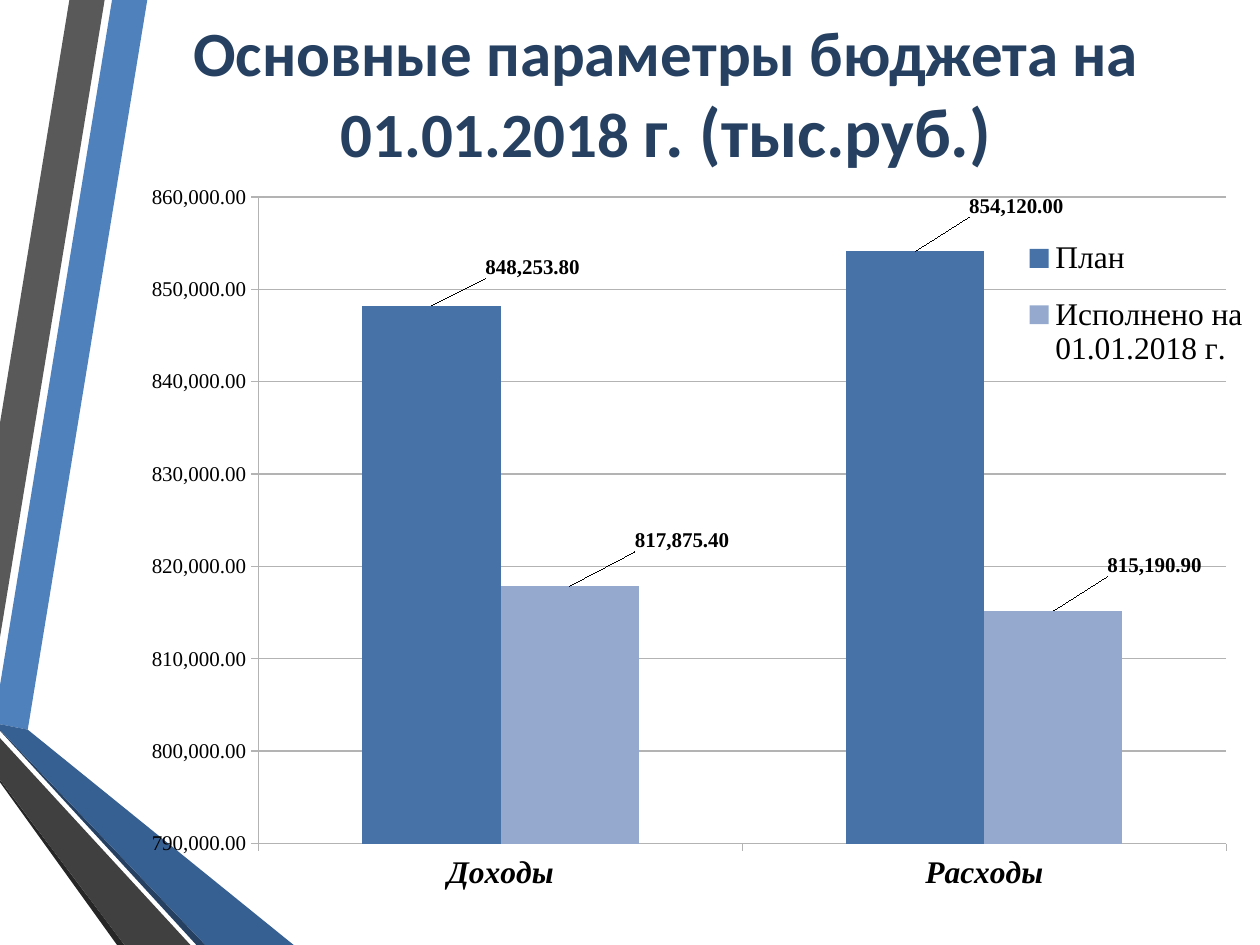
from dataclasses import dataclass

from lxml import etree
from pptx import Presentation
from pptx.chart.data import CategoryChartData
from pptx.dml.color import RGBColor
from pptx.enum.chart import XL_CHART_TYPE as ChartType
from pptx.enum.chart import XL_LABEL_POSITION as LabelPosition
from pptx.enum.chart import XL_LEGEND_POSITION as LegendPosition
from pptx.enum.chart import XL_TICK_MARK as TickMark
from pptx.enum.text import MSO_ANCHOR as Anchor
from pptx.enum.text import PP_ALIGN as Align
from pptx.oxml.ns import qn
from pptx.util import Cm, Pt

COLORS = {
    "blue": "4F81BD", "gray": "595959", "black": "262626",
    "navy": "254061", "steel": "376092", "charcoal": "404040",
    "plan": "4672A8", "actual": "95A9CF", "grid": "B3B3B3", "text": "000000",
}
SERIF = "Times New Roman"
NUMBER_FORMAT = "#,##0.00"
LABEL_FONT = {"name": SERIF, "size": Pt(12), "bold": True}


@dataclass
class Ribbon:
    color: str
    points: list[tuple[float, float]]  # centimetres


@dataclass
class BudgetSeries:
    name: str
    color: str
    values: list[float]
    label_offsets: list[tuple[float, float]]  # fractions of the chart


RIBBONS = [
    Ribbon("blue", [(0, 13.82), (0, 14.6), (0.56, 14.71), (2.97, 0), (2.26, 0)]),
    Ribbon("gray", [(2.11, 0), (1.4, 0), (0, 8.53), (0, 12.85)]),
    Ribbon("black", [(0, 15.72), (0, 15.77), (2.36, 19.05), (2.51, 19.05)]),
    Ribbon("navy", [(0, 14.71), (0, 14.73), (3.96, 19.05), (4.14, 19.05)]),
    Ribbon("steel", [(0, 14.71), (4.14, 19.05), (5.92, 19.05), (0.56, 14.71), (0, 14.6)]),
    Ribbon("charcoal", [(0, 15.72), (2.51, 19.05), (3.84, 19.05), (0, 14.88)]),
]
CATEGORIES = ["Доходы", "Расходы"]
BUDGET = [
    BudgetSeries("План", "plan", [848253.8, 854120], [(0.09, -0.03), (0.09, -0.04)]),
    BudgetSeries("Исполнено на 01.01.2018 г.", "actual", [817875.4, 815190.9],
                 [(0.1, -0.04), (0.09, -0.04)]),
]


def rgb(name: str) -> RGBColor:
    return RGBColor.from_string(COLORS[name])


def apply_format(target, values: dict) -> None:
    for attribute, value in values.items():
        setattr(target, attribute, value)


def manual_layout(values: dict):
    """Return a c:layout element holding the given settings."""
    layout = etree.Element(qn("c:layout"))
    manual = etree.SubElement(layout, qn("c:manualLayout"))
    for tag, value in values.items():
        etree.SubElement(manual, qn(f"c:{tag}")).set("val", str(value))
    return layout


def edge_layout(x: float, y: float, w: float, h: float, **target):
    return manual_layout({**target, "xMode": "edge", "yMode": "edge",
                          "x": x, "y": y, "w": w, "h": h})


def draw_ribbon(slide, ribbon: Ribbon) -> None:
    points = [(Cm(x), Cm(y)) for x, y in ribbon.points]
    builder = slide.shapes.build_freeform(*points[0])
    builder.add_line_segments(points[1:], close=True)
    shape = builder.convert_to_shape()
    shape.shadow.inherit = False
    shape.fill.solid()
    shape.fill.fore_color.rgb = rgb(ribbon.color)
    shape.line.fill.background()


def draw_title(slide) -> None:
    box = slide.shapes.add_textbox(Cm(2.72), Cm(0), Cm(21.41), Cm(3.73))
    apply_format(box.text_frame, {"word_wrap": True, "vertical_anchor": Anchor.MIDDLE})
    paragraph = box.text_frame.paragraphs[0]
    paragraph.alignment = Align.CENTER

    def add_run(text: str, size: float) -> None:
        run = paragraph.add_run()
        run.text = text
        apply_format(run.font, {"name": "Calibri", "size": Pt(size), "bold": True})
        run.font.color.rgb = rgb("navy")

    add_run("Основные параметры бюджета на", 36)
    paragraph.add_line_break()
    add_run("01.01.2018 ", 36)
    add_run("г. (тыс.руб.)", 39.6)


def style_axis(axis, font: dict) -> None:
    apply_format(axis, {"major_tick_mark": TickMark.OUTSIDE,
                        "minor_tick_mark": TickMark.NONE})
    apply_format(axis.tick_labels.font, {"name": SERIF, **font})
    axis.format.line.color.rgb = rgb("grid")


def style_series(series, budget: BudgetSeries) -> None:
    series.format.fill.solid()
    series.format.fill.fore_color.rgb = rgb(budget.color)
    labels = series.data_labels
    apply_format(labels, {"show_value": True, "number_format": NUMBER_FORMAT,
                          "number_format_is_linked": False,
                          "position": LabelPosition.OUTSIDE_END})
    apply_format(labels.font, LABEL_FONT)
    # Shift each label away from its column
    for index, (x, y) in enumerate(budget.label_offsets):
        label = series.points[index].data_label
        label.position = LabelPosition.OUTSIDE_END
        apply_format(label.font, LABEL_FONT)
    for element, (x, y) in zip(series._element.iter(qn("c:dLbl")), budget.label_offsets):
        element.insert(1, manual_layout({"x": x, "y": y}))


def draw_chart(slide) -> None:
    data = CategoryChartData(number_format=NUMBER_FORMAT)
    data.categories = CATEGORIES
    for budget in BUDGET:
        data.add_series(budget.name, budget.values)
    chart = slide.shapes.add_chart(ChartType.COLUMN_CLUSTERED, Cm(2.72), Cm(3.53),
                                   Cm(22.68), Cm(14.81), data).chart
    chart.has_title = False
    apply_format(chart.font, {"name": "Calibri", "size": Pt(18)})
    chart.font.color.rgb = rgb("text")

    # Columns
    plot = chart.plots[0]
    apply_format(plot, {"gap_width": 150, "overlap": 0, "vary_by_categories": False})
    for series, budget in zip(plot.series, BUDGET):
        style_series(series, budget)

    # Axes
    style_axis(chart.category_axis, {"size": Pt(18), "bold": True, "italic": True})
    value_axis = chart.value_axis
    style_axis(value_axis, {"size": Pt(12)})
    apply_format(value_axis, {"minimum_scale": 790000, "maximum_scale": 860000,
                              "major_unit": 10000, "has_major_gridlines": True})
    apply_format(value_axis.tick_labels, {"number_format": NUMBER_FORMAT,
                                          "number_format_is_linked": False})
    value_axis.major_gridlines.format.line.color.rgb = rgb("grid")

    # Legend over the plot
    chart.has_legend = True
    legend = chart.legend
    apply_format(legend, {"position": LegendPosition.RIGHT, "include_in_layout": False})
    apply_format(legend.font, {"name": SERIF, "size": Pt(18)})

    # Fixed places for the plot and the legend
    plot_area = chart._chartSpace.find(".//" + qn("c:plotArea"))
    for old_layout in (plot_area.findall(qn("c:layout"))
                       + legend._element.findall(qn("c:layout"))):
        old_layout.getparent().remove(old_layout)
    plot_area.insert(0, edge_layout(0.11, 0.03, 0.86, 0.88, layoutTarget="inner"))
    legend._element.find(qn("c:legendPos")).addnext(edge_layout(0.78, 0.06, 0.22, 0.23))


def main() -> None:
    presentation = Presentation()
    apply_format(presentation, {"slide_width": Cm(25.4), "slide_height": Cm(19.05)})
    slide = presentation.slides.add_slide(presentation.slide_layouts[6])
    for ribbon in RIBBONS:
        draw_ribbon(slide, ribbon)
    draw_title(slide)
    draw_chart(slide)
    presentation.save("out.pptx")


if __name__ == "__main__":
    main()
